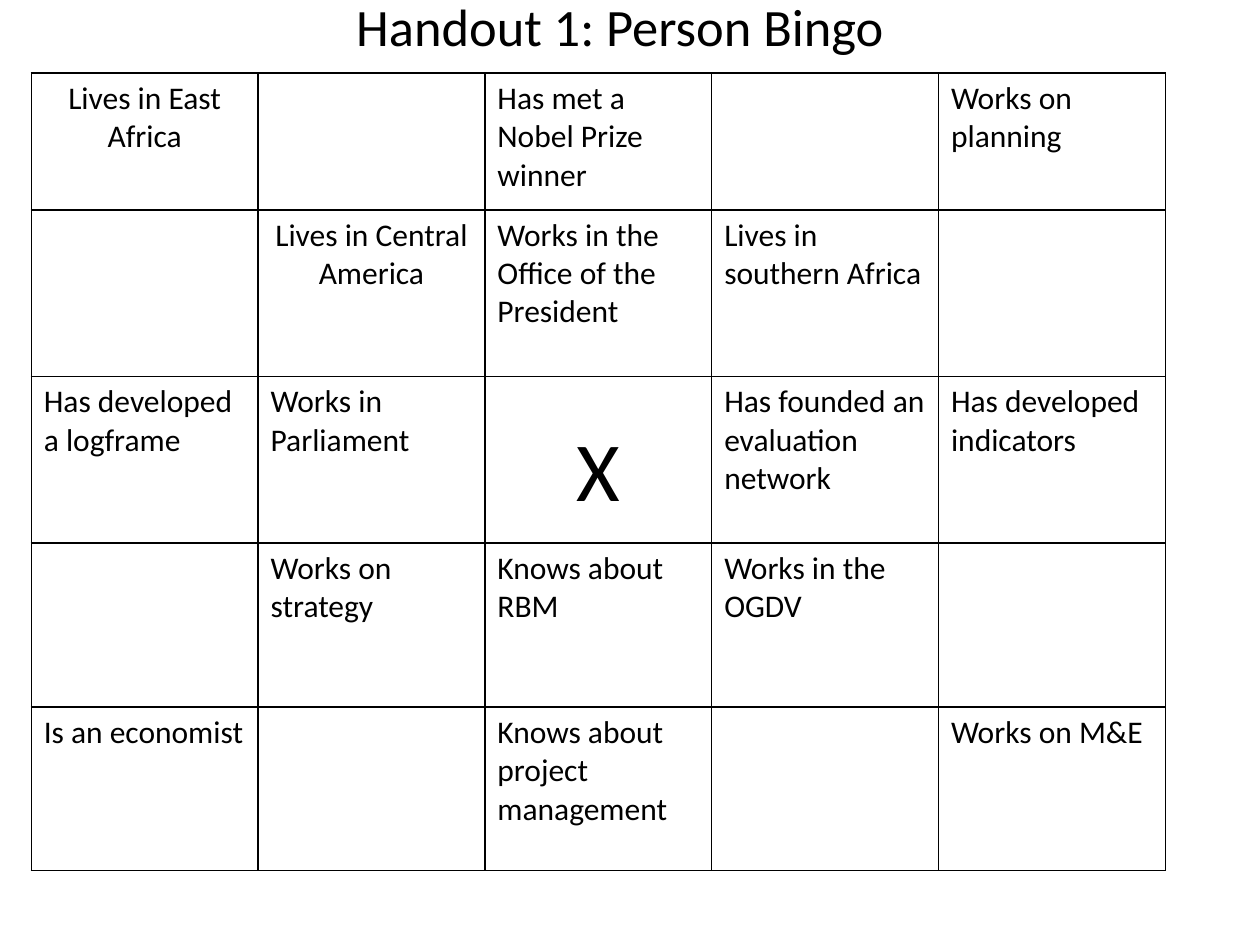
from lxml import etree
from pptx import Presentation
from pptx.dml.color import RGBColor
from pptx.enum.text import MSO_ANCHOR, PP_ALIGN
from pptx.oxml.ns import qn
from pptx.util import Cm, Pt

BLACK = RGBColor(0x00, 0x00, 0x00)
FONT = "Calibri"
CENTER, LEFT = PP_ALIGN.CENTER, PP_ALIGN.LEFT
MIDDLE = MSO_ANCHOR.MIDDLE
TITLE_ONLY = 5

TITLE_BOX = (Cm(1.07), Cm(-1.07), Cm(22.86), Cm(3.18))
GRID_BOX = (Cm(0.63), Cm(1.47), Cm(22.86), Cm(16.06))
ROW_HEIGHTS = (Cm(2.76), Cm(3.36), Cm(3.36), Cm(3.3), Cm(3.3))
FREE_SQUARE = "X"
BINGO = (
    ("Lives in East Africa", "", "Has met a Nobel Prize winner", "", "Works on planning"),
    ("", "Lives in Central America", "Works in the Office of the President",
     "Lives in southern Africa", ""),
    ("Has developed a logframe", "Works in Parliament", FREE_SQUARE,
     "Has founded an evaluation network", "Has developed indicators"),
    ("", "Works on strategy", "Knows about RBM", "Works in the OGDV", ""),
    ("Is an economist", "", "Knows about project management", "", "Works on M&E"),
)
CENTERED = {"Lives in East Africa", "Lives in Central America", FREE_SQUARE}


def write(tf, text, size, align):
    p = tf.paragraphs[0]
    p.alignment = align
    r = p.add_run()
    r.text = text
    for name, value in {"name": FONT, "size": Pt(size), "bold": False}.items():
        setattr(r.font, name, value)
    r.font.color.rgb = BLACK


def add_borders(cell, width=Pt(1)):
    tc_pr = cell._tc.get_or_add_tcPr()
    for i, side in enumerate(("a:lnL", "a:lnR", "a:lnT", "a:lnB")):
        ln = etree.Element(qn(side), w=str(width))
        fill = etree.SubElement(ln, qn("a:solidFill"))
        etree.SubElement(fill, qn("a:srgbClr"), val=str(BLACK))
        tc_pr.insert(i, ln)


def add_title(s, box, text):
    sp = s.shapes.title
    sp.left, sp.top, sp.width, sp.height = box
    sp.text_frame.vertical_anchor = MIDDLE
    write(sp.text_frame, text, 30, CENTER)


def add_bingo_grid(s, box, rows):
    table = s.shapes.add_table(len(rows), len(rows[0]), *box).table
    table.first_row = table.horz_banding = False
    for row, height in zip(table.rows, ROW_HEIGHTS):
        row.height = height
    for i, texts in enumerate(rows):
        for j, text in enumerate(texts):
            cell = table.cell(i, j)
            cell.fill.background()
            add_borders(cell)
            free = text == FREE_SQUARE
            if free:
                cell.margin_top = Cm(0.9)
            if text:
                write(cell.text_frame, text, 48 if free else 18,
                      CENTER if text in CENTERED else LEFT)


def main():
    prs = Presentation()
    prs.slide_width, prs.slide_height = Cm(25.4), Cm(19.05)
    s = prs.slides.add_slide(prs.slide_layouts[TITLE_ONLY])
    add_title(s, TITLE_BOX, "Handout 1: Person Bingo")
    add_bingo_grid(s, GRID_BOX, BINGO)
    prs.save("out.pptx")


if __name__ == "__main__":
    main()
